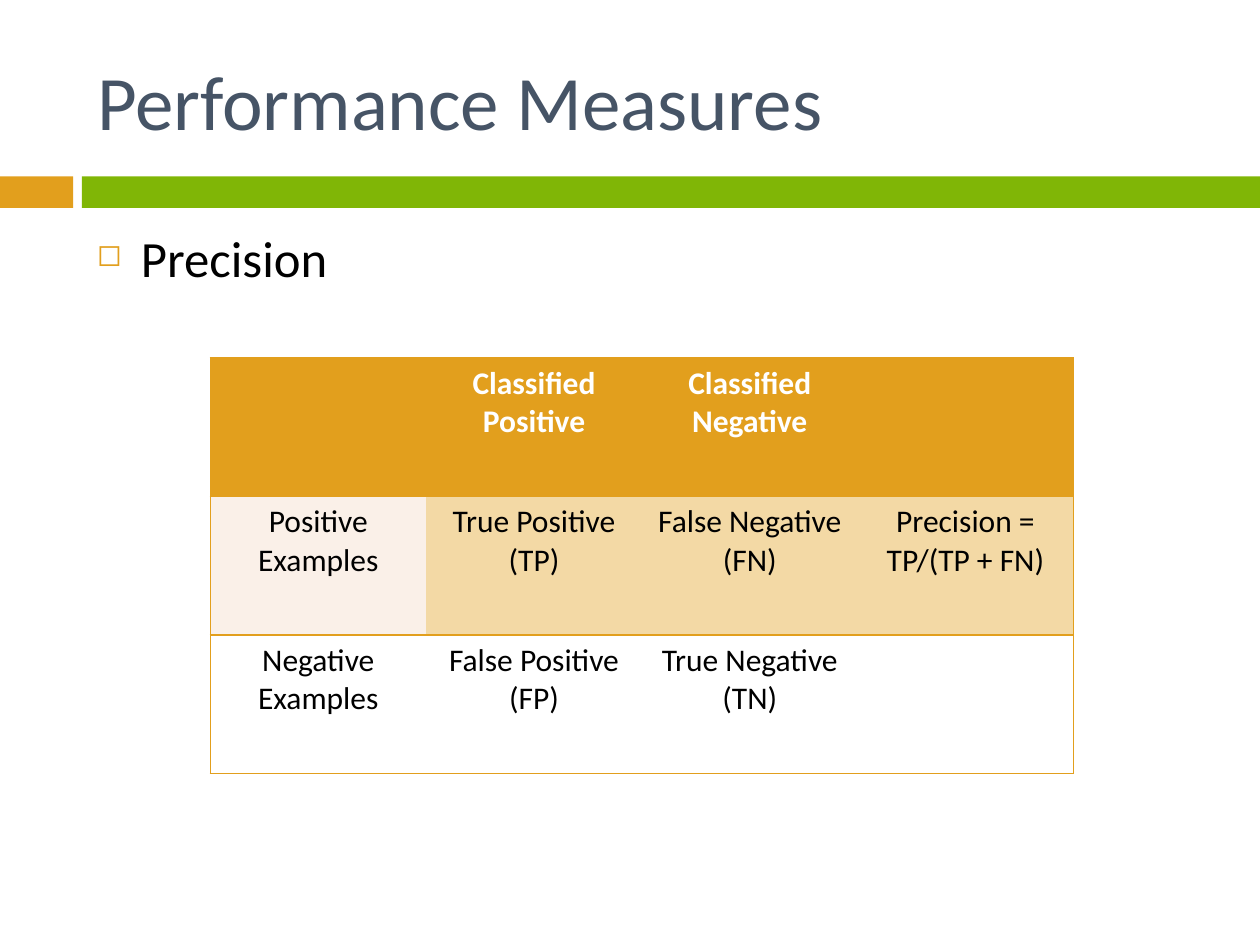
from dataclasses import dataclass

from lxml.etree import SubElement
from pptx import Presentation
from pptx.dml.color import RGBColor
from pptx.enum.shapes import MSO_SHAPE
from pptx.enum.text import MSO_ANCHOR, PP_ALIGN
from pptx.oxml import parse_xml
from pptx.oxml.ns import nsdecls, qn
from pptx.util import Inches, Pt


@dataclass(frozen=True)
class Theme:
    font: str = "Calibri"
    orange: str = "E29F1D"
    green: str = "80B606"
    slate: str = "465466"
    black: str = "000000"
    white: str = "FFFFFF"
    sand: str = "F3D9A5"
    cream: str = "FAF0E8"
    title_size: int = 44
    body_size: int = 29
    table_size: int = 18
    bullet_percent: int = 60
    border_width: int = 1


def write_text(frame, text, *, font, size, color, bold=False,
               align=PP_ALIGN.LEFT, anchor=MSO_ANCHOR.TOP):
    frame.word_wrap = True
    frame.vertical_anchor = anchor
    paragraph = frame.paragraphs[0]
    paragraph.alignment = align
    run = paragraph.add_run()
    run.text = text
    run.font.name = font
    run.font.size = Pt(size)
    run.font.bold = bold
    run.font.color.rgb = RGBColor.from_string(color)
    return paragraph


class SlideBuilder:
    def __init__(self, presentation, theme):
        self.theme = theme
        self.slide = presentation.slides.add_slide(presentation.slide_layouts[5])

    def bar(self, left, top, width, height, color):
        band = self.slide.shapes.add_shape(
            MSO_SHAPE.RECTANGLE, *map(Inches, (left, top, width, height)))
        band.shadow.inherit = False
        band.fill.solid()
        band.fill.fore_color.rgb = RGBColor.from_string(color)
        band.line.fill.background()

    def title(self, text, left, top, width, height):
        heading = self.slide.shapes.title
        heading.left, heading.top = Inches(left), Inches(top)
        heading.width, heading.height = Inches(width), Inches(height)
        write_text(heading.text_frame, text, font=self.theme.font,
                   size=self.theme.title_size, color=self.theme.slate,
                   anchor=MSO_ANCHOR.MIDDLE)

    def bullet(self, text, left, top, width, height, indent):
        body = self.slide.shapes.add_textbox(
            *map(Inches, (left, top, width, height)))
        paragraph = write_text(body.text_frame, text, font=self.theme.font,
                               size=self.theme.body_size, color=self.theme.black)
        paragraph.space_before = Pt(7)
        properties = paragraph._p.get_or_add_pPr()
        properties.set("marL", str(Inches(indent)))
        properties.set("indent", str(-Inches(indent)))
        bullet_color = SubElement(properties, qn("a:buClr"))
        SubElement(bullet_color, qn("a:srgbClr"), val=self.theme.orange)
        SubElement(properties, qn("a:buSzPct"),
                   val=str(self.theme.bullet_percent * 1000))
        SubElement(properties, qn("a:buChar"), char="◻")

    def borders(self, cell, visible_sides):
        properties = cell._tc.get_or_add_tcPr()
        solid = f'<a:solidFill><a:srgbClr val="{self.theme.orange}"/></a:solidFill>'
        for position, side in enumerate("LRTB"):
            paint = solid if side in visible_sides else "<a:noFill/>"
            properties.insert(position, parse_xml(
                f'<a:ln{side} {nsdecls("a")} w="{Pt(self.theme.border_width)}">'
                f'{paint}</a:ln{side}>'))

    def table(self, rows, row_fills, left, top, width, height):
        row_count, column_count = len(rows), len(rows[0])
        matrix = self.slide.shapes.add_table(
            row_count, column_count,
            *map(Inches, (left, top, width, height))).table
        matrix.horz_banding = False
        for row_index, (labels, fills) in enumerate(zip(rows, row_fills)):
            is_header = row_index == 0
            for column_index, (label, fill) in enumerate(zip(labels, fills)):
                cell = matrix.cell(row_index, column_index)
                cell.fill.solid()
                cell.fill.fore_color.rgb = RGBColor.from_string(fill)
                sides = "TB"
                if column_index == 0:
                    sides += "L"
                if column_index == column_count - 1:
                    sides += "R"
                self.borders(cell, sides)
                if label:
                    write_text(
                        cell.text_frame, label, font=self.theme.font,
                        size=self.theme.table_size, bold=is_header,
                        color=self.theme.white if is_header else self.theme.black,
                        align=PP_ALIGN.CENTER)


def main():
    presentation = Presentation()
    presentation.slide_width, presentation.slide_height = Inches(10), Inches(7.5)
    theme = Theme()
    builder = SlideBuilder(presentation, theme)

    builder.bar(0, 1.4, 0.58, 0.25, theme.orange)
    builder.bar(0.65, 1.4, 9.35, 0.25, theme.green)
    builder.title("Performance Measures", 0.67, 0.25, 8.92, 1.08)
    builder.bullet("Precision", 0.67, 1.75, 8.92, 4.92, indent=0.35)

    confusion_matrix = [
        ["", "Classified Positive", "Classified Negative", ""],
        ["Positive Examples", "True Positive (TP)", "False Negative (FN)",
         "Precision = TP/(TP + FN)"],
        ["Negative Examples", "False Positive (FP)", "True Negative (TN)", ""],
    ]
    row_fills = [
        [theme.orange] * 4,
        [theme.cream] + [theme.sand] * 3,
        [theme.white] * 4,
    ]
    builder.table(confusion_matrix, row_fills, 1.67, 2.84, 6.85, 3.3)
    presentation.save("out.pptx")


if __name__ == "__main__":
    main()
